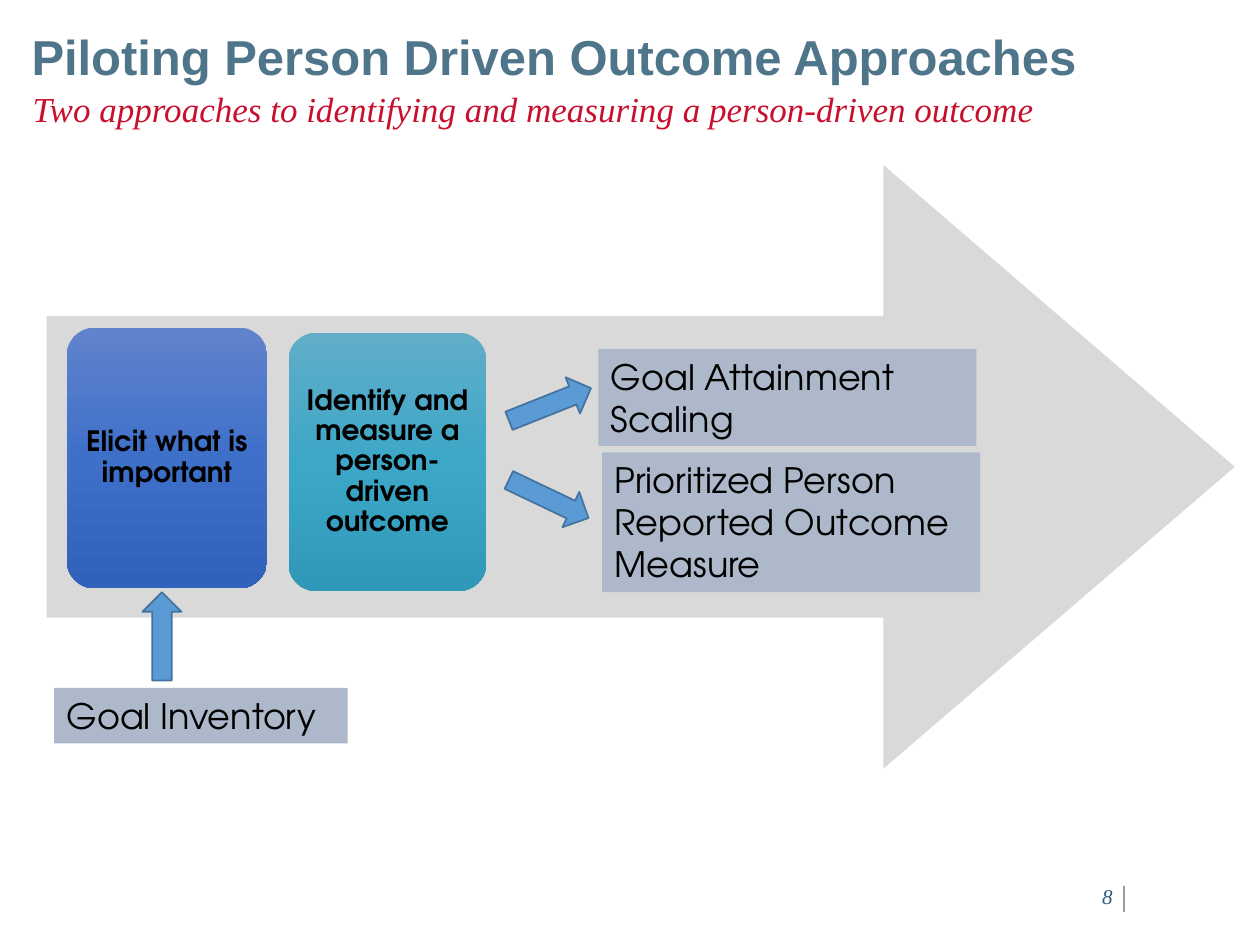
from lxml import etree
from copy import deepcopy
from pptx import Presentation
from pptx.dml.color import RGBColor
from pptx.enum.shapes import MSO_CONNECTOR, MSO_SHAPE
from pptx.enum.text import MSO_ANCHOR, MSO_AUTO_SIZE, PP_ALIGN
from pptx.oxml.ns import qn
from pptx.util import Inches, Pt

COLORS = {
    "title": "4F758B", "subtitle": "C8102E", "text": "000000",
    "band": "D9D9D9", "label": "ADB9CA", "arrow": "5B9BD5",
    "arrow_edge": "43739E", "number": "2E5A7C", "rule": "989D9F",
}
LABEL_FONT = "TeX Gyre Adventor"
SERIF_FONT = "Times New Roman"


def add_shape(kind, left, top, width, height, color=None):
    """Add a preset shape without shadow or outline."""
    shape = slide.shapes.add_shape(
        kind, Inches(left), Inches(top), Inches(width), Inches(height))
    shape.shadow.inherit = False
    shape.line.fill.background()
    if color:
        shape.fill.solid()
        shape.fill.fore_color.rgb = RGBColor.from_string(COLORS[color])
    return shape


def write_text(shape, text, size, font, color, anchor=MSO_ANCHOR.TOP,
               align=PP_ALIGN.LEFT, spacing=1.0, margins=(0.1, 0.05, 0.1, 0.05),
               bold=False, italic=False):
    """Fill a shape with one formatted paragraph and return it."""
    frame = shape.text_frame
    frame.word_wrap = True
    frame.auto_size = MSO_AUTO_SIZE.NONE
    frame.vertical_anchor = anchor
    (frame.margin_left, frame.margin_top,
     frame.margin_right, frame.margin_bottom) = [Inches(m) for m in margins]
    para = frame.paragraphs[0]
    para.alignment = align
    para.line_spacing = spacing
    para.space_before = Pt(0)
    span = para.add_run()
    span.text = text
    span.font.size = Pt(size)
    span.font.name = font
    span.font.bold = bold
    span.font.italic = italic
    span.font.color.rgb = RGBColor.from_string(COLORS[color])
    return para


deck = Presentation()
deck.slide_width = Inches(10)
deck.slide_height = Inches(7.5)
slide = deck.slides.add_slide(deck.slide_layouts[1])

# Title and subtitle
title = slide.shapes.title
title.left, title.top = Inches(0.25), Inches(0.26)
title.width, title.height = Inches(9.5), Inches(0.41)
write_text(title, "Piloting Person Driven Outcome Approaches", 28, "Arial",
           "title", spacing=0.9, margins=(0, 0, 0.1, 0), bold=True)

subtitle = slide.placeholders[1]
subtitle.left, subtitle.top = Inches(0.25), Inches(0.73)
subtitle.width, subtitle.height = Inches(9.5), Inches(0.36)
para = write_text(
    subtitle,
    "Two approaches to identifying and measuring a person-driven outcome",
    20, SERIF_FONT, "subtitle", spacing=0.9, margins=(0, 0, 0, 0), italic=True)
para_props = para._p.get_or_add_pPr()
para_props.set("marL", str(Inches(0.01)))
para_props.set("indent", "0")
etree.SubElement(para_props, qn("a:buNone"))

# Large background arrow
band = add_shape(MSO_SHAPE.RIGHT_ARROW, 0.37, 1.31, 9.43, 4.79, "band")
band.adjustments[0] = 0.5
band.adjustments[1] = 0.582

# Step cards with three-stop vertical gradients
cards = [
    ("Identify and measure a person-driven outcome",
     (2.29, 2.64, 1.57, 2.05), ("61ADC8", "3DA7C7", "3098B8")),
    ("Elicit what is important",
     (0.53, 2.6, 1.59, 2.07), ("6183CB", "3E70CA", "3062BB")),
]
for text, place, gradient in cards:
    card = add_shape(MSO_SHAPE.ROUNDED_RECTANGLE, *place)
    card.adjustments[0] = 0.14
    card.fill.gradient()
    card.fill.gradient_angle = 270
    stop_list = card._element.spPr.find(qn("a:gradFill")).find(qn("a:gsLst"))
    stop_list.insert(1, deepcopy(stop_list[0]))
    for stop, position, color in zip(card.fill.gradient_stops, (0, 0.5, 1), gradient):
        stop.position = position
        stop.color.rgb = RGBColor.from_string(color)
    write_text(card, text, 16, LABEL_FONT, "text", MSO_ANCHOR.MIDDLE,
               PP_ALIGN.CENTER, 0.9, (0.08, 0.13, 0.08, 0.13), bold=True)

# Approach labels
labels = [
    ("Goal Inventory", (0.43, 5.46, 2.33, 0.44)),
    ("Goal Attainment Scaling", (4.75, 2.77, 3, 0.77)),
    ("Prioritized Person Reported Outcome Measure", (4.78, 3.59, 3, 1.11)),
]
for text, place in labels:
    label = add_shape(MSO_SHAPE.RECTANGLE, *place, "label")
    write_text(label, text, 20, LABEL_FONT, "text")
    label.text_frame.auto_size = MSO_AUTO_SIZE.SHAPE_TO_FIT_TEXT

# Small arrows between steps and labels
for left, top, rotation in [(1.13, 4.7, 180), (4.21, 2.86, 248.3), (4.2, 3.61, 295.5)]:
    arrow = add_shape(MSO_SHAPE.DOWN_ARROW, left, top, 0.31, 0.7, "arrow")
    arrow.rotation = rotation
    arrow.line.color.rgb = RGBColor.from_string(COLORS["arrow_edge"])
    arrow.line.width = Pt(1)

# Page number and its rule
number = slide.shapes.add_textbox(Inches(8.24), Inches(7.03), Inches(0.59), Inches(0.18))
write_text(number, "8", 12, SERIF_FONT, "number", MSO_ANCHOR.BOTTOM,
           PP_ALIGN.RIGHT, margins=(0, 0, 0, 0), italic=True)
rule = slide.shapes.add_connector(
    MSO_CONNECTOR.STRAIGHT, Inches(8.92), Inches(7.03), Inches(8.92), Inches(7.24))
rule.line.color.rgb = RGBColor.from_string(COLORS["rule"])
rule.line.width = Pt(1)
etree.SubElement(rule._element.spPr, qn("a:effectLst"))

deck.save("out.pptx")
